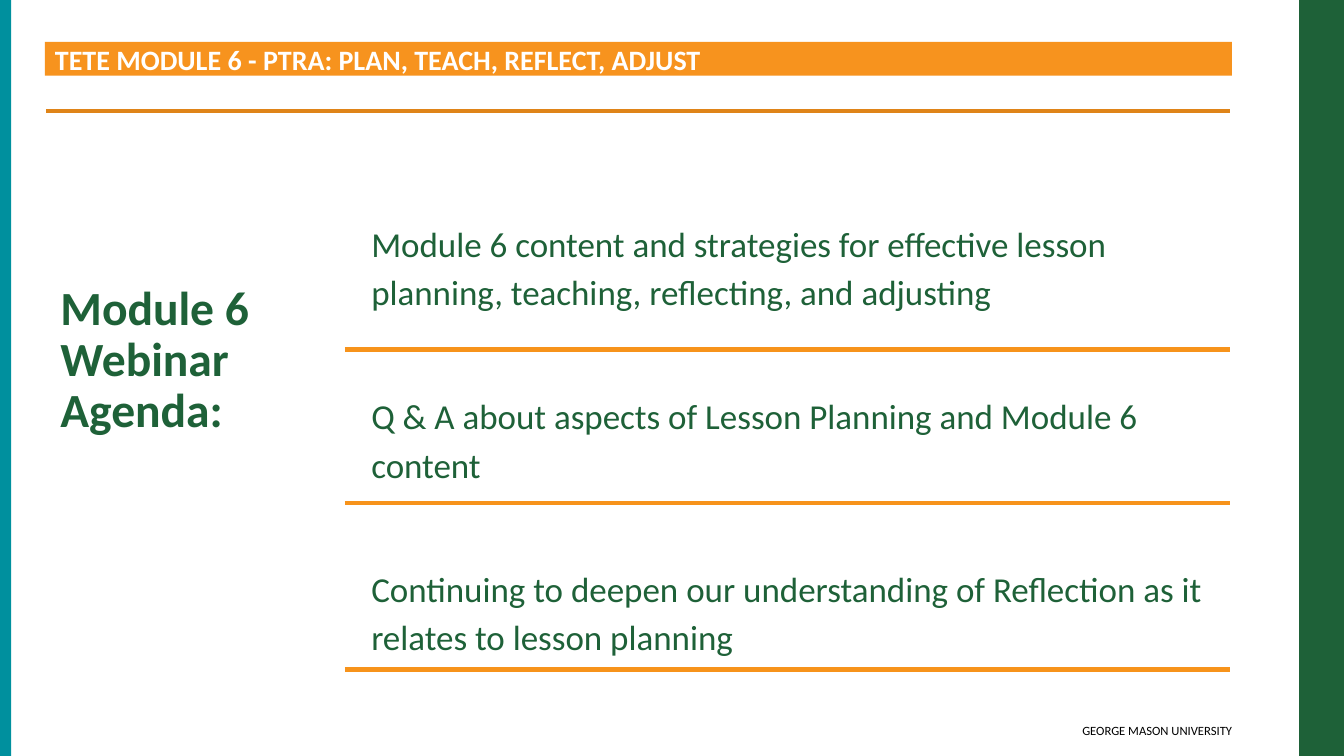
from pptx import Presentation
from pptx.dml.color import RGBColor
from pptx.enum.shapes import MSO_CONNECTOR, MSO_SHAPE
from pptx.enum.text import MSO_ANCHOR, MSO_AUTO_SIZE, PP_ALIGN
from pptx.oxml.ns import qn
from pptx.util import Inches, Pt
from lxml import etree

STRAIGHT = MSO_CONNECTOR.STRAIGHT
RECTANGLE = MSO_SHAPE.RECTANGLE
MIDDLE, TOP = MSO_ANCHOR.MIDDLE, MSO_ANCHOR.TOP
LEFT, RIGHT = PP_ALIGN.LEFT, PP_ALIGN.RIGHT
NO_AUTOFIT = MSO_AUTO_SIZE.NONE

GREEN = RGBColor(0x1E, 0x61, 0x38)
TEAL = RGBColor(0x00, 0x90, 0x9E)
ORANGE = RGBColor(0xF7, 0x93, 0x1E)
DARK_ORANGE = RGBColor(0xDF, 0x84, 0x18)
RULE_ORANGE = RGBColor(0xF7, 0x93, 0x1B)
WHITE = RGBColor(0xFF, 0xFF, 0xFF)
BLACK = RGBColor(0x00, 0x00, 0x00)

SLIDE_WIDTH, SLIDE_HEIGHT = Inches(13.33), Inches(7.5)
COLUMNS, ROWS = 120, 90
RULE_RIGHT = 109.8
AGENDA_TOP, AGENDA_STEP = 25.7, 20.55
AGENDA = [
    ("Module 6 content and strategies for effective lesson planning, "
     "teaching, reflecting, and adjusting", 41.65),
    ("Q & A about aspects of Lesson Planning and Module 6 content", 59.9),
    ("Continuing to deepen our understanding of Reflection as it relates "
     "to lesson planning", 79.7),
]


def across(columns):
    """Turn grid columns into a length."""
    return round(SLIDE_WIDTH * columns / COLUMNS)


def down(rows):
    """Turn grid rows into a length."""
    return round(SLIDE_HEIGHT * rows / ROWS)


def grid_box(left, top, width, height):
    """Turn a grid cell range into left, top, width and height."""
    return across(left), down(top), across(width), down(height)


def write(holder, text, size, color, bold=False, align=LEFT, anchor=TOP,
          spacing=1.0, inset=0):
    """Set and format the text of a shape."""
    frame = holder.text_frame
    frame.text = text
    frame.word_wrap = True
    frame.auto_size = NO_AUTOFIT
    frame.vertical_anchor = anchor
    frame.margin_left = frame.margin_right = inset
    frame.margin_top = frame.margin_bottom = 0
    for paragraph in frame.paragraphs:
        paragraph.alignment = align
        paragraph.line_spacing = spacing
        paragraph.space_before = Pt(0)
        for run in paragraph.runs:
            run.font.name = "Calibri"
            run.font.size = Pt(size)
            run.font.bold = bold
            run.font.color.rgb = color


def add_bar(slide, color, *cells):
    """Add a full-height coloured edge bar."""
    bar = slide.shapes.add_shape(RECTANGLE, *grid_box(*cells))
    bar.shadow.inherit = False
    bar.fill.solid()
    bar.fill.fore_color.rgb = color
    bar.line.fill.background()


def add_rule(slide, left, row, color):
    """Add a horizontal rule that ends at the content's right edge."""
    rule = slide.shapes.add_connector(
        STRAIGHT, across(left), down(row), across(RULE_RIGHT), down(row))
    rule.line.color.rgb = color
    rule.line.width = Pt(3.35)
    etree.SubElement(rule.element.spPr, qn("a:effectLst"))


def add_text(slide, cells, text, size, color, **style):
    """Add a text box on the grid."""
    write(slide.shapes.add_textbox(*grid_box(*cells)), text, size, color, **style)


def fill_banner(slide):
    """Place and format the title as the module banner."""
    banner = slide.shapes.title
    banner.left, banner.top, banner.width, banner.height = grid_box(4, 5, 106, 4)
    banner.fill.solid()
    banner.fill.fore_color.rgb = ORANGE
    write(banner, "TETE MODULE 6 - PTRA: PLAN, TEACH, REFLECT, ADJUST", 20,
          WHITE, bold=True, anchor=MIDDLE, inset=Inches(0.1))


def main():
    """Build the agenda slide."""
    deck = Presentation()
    deck.slide_width, deck.slide_height = SLIDE_WIDTH, SLIDE_HEIGHT
    slide = deck.slides.add_slide(deck.slide_layouts[5])
    add_bar(slide, GREEN, 116, 0, 4, ROWS)
    add_bar(slide, TEAL, 0, 0, 1, ROWS)
    add_text(slide, (61, 85, 49, 4), "GEORGE MASON UNIVERSITY", 9, BLACK,
             align=RIGHT, anchor=MIDDLE)
    fill_banner(slide)
    add_rule(slide, 4.15, 13.2, DARK_ORANGE)
    add_text(slide, (5.4, 33.8, 24, 20), "Module 6\nWebinar Agenda:", 34, GREEN,
             bold=True, spacing=0.9)
    for index, (topic, rule_row) in enumerate(AGENDA):
        topic_top = AGENDA_TOP + index * AGENDA_STEP
        add_text(slide, (33.15, topic_top, 75.8, 12), topic, 25, GREEN,
                 spacing=1.15)
        add_rule(slide, 30.8, rule_row, RULE_ORANGE)
    deck.save("out.pptx")


if __name__ == "__main__":
    main()
